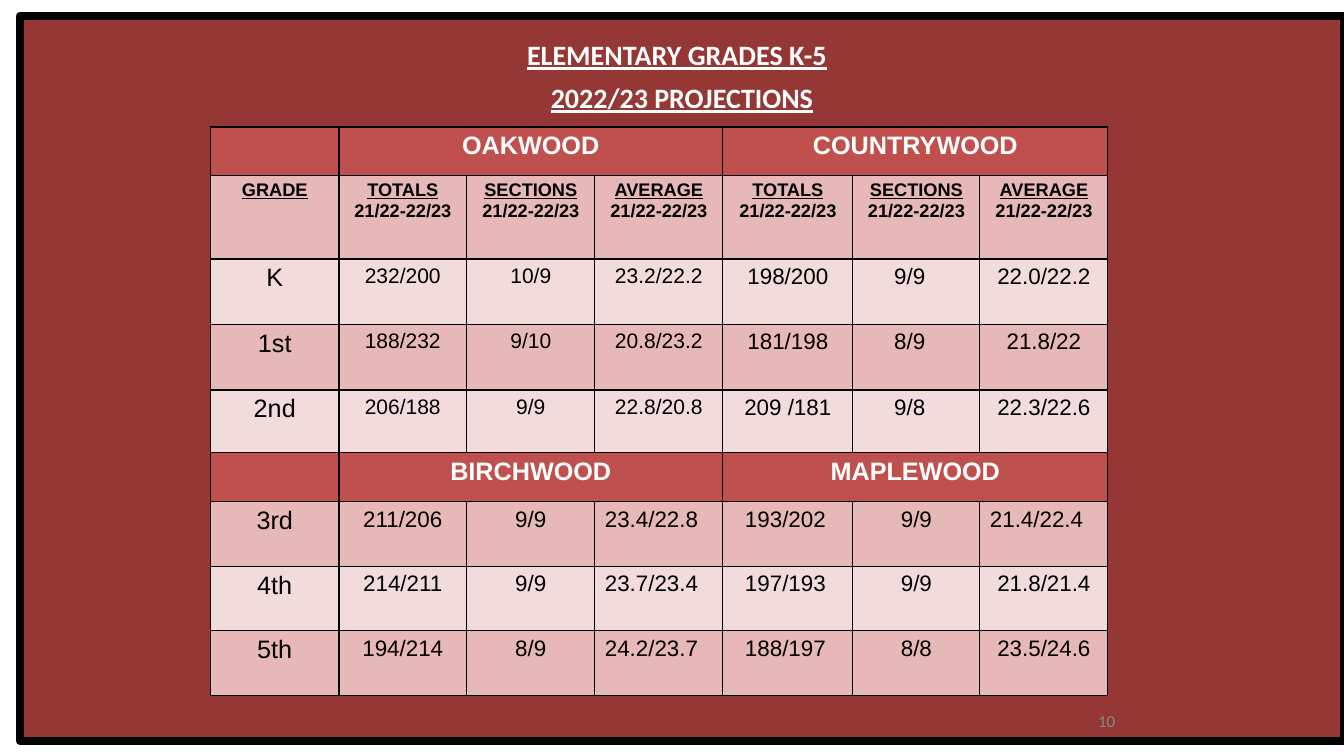
"""Build the elementary grades K-5 enrolment projections slide."""
from lxml.etree import SubElement
from pptx import Presentation
from pptx.dml.color import RGBColor
from pptx.enum.shapes import MSO_SHAPE
from pptx.enum.text import MSO_ANCHOR, PP_ALIGN
from pptx.oxml.ns import qn
from pptx.util import Inches, Pt

THEME = {
    "panel": RGBColor.from_string("953734"),
    "band": RGBColor.from_string("C0504D"),
    "dark_row": RGBColor.from_string("E6B9B8"),
    "light_row": RGBColor.from_string("F2DCDB"),
    "white": RGBColor.from_string("FFFFFF"),
    "black": RGBColor.from_string("000000"),
    "gray": RGBColor.from_string("888888"),
    "heading_font": "Calibri",
    "table_font": "Arial",
    "title": 20, "title_gap": 32, "school": 18, "header": 13,
    "grade": 18, "small_figure": 15, "figure": 16, "page": 12,
}
COLUMN_WIDTHS = [1.27] * 4 + [1.29, 1.26, 1.27]
ROW_HEIGHTS = [0.48, 0.83, 0.65, 0.65, 0.62, 0.49] + [0.64] * 3
HEADINGS = [f"{name}\n21/22-22/23" for name in ("TOTALS", "SECTIONS", "AVERAGE")]
ROWS = [
    ["", "OAKWOOD", "", "", "COUNTRYWOOD", "", ""],
    ["GRADE"] + HEADINGS * 2,
    ["K", "232/200", "10/9", "23.2/22.2", "198/200", "9/9", "22.0/22.2"],
    ["1st", "188/232", "9/10", "20.8/23.2", "181/198", "8/9", "21.8/22"],
    ["2nd", "206/188", "9/9", "22.8/20.8", "209 /181", "9/8", "22.3/22.6"],
    ["", "BIRCHWOOD", "", "", "MAPLEWOOD", "", ""],
    ["3rd", "211/206", "9/9", "23.4/22.8", "193/202", "9/9", "21.4/22.4"],
    ["4th", "214/211", "9/9", "23.7/23.4", "197/193", "9/9", "21.8/21.4"],
    ["5th", "194/214", "8/9", "24.2/23.7", "188/197", "8/8", "23.5/24.6"],
]
SCHOOL_ROWS = (0, 5)
HEADER_ROW = 1
LEFT_INDENTS = {(row, 5): 0.31 for row in (2, 3, 4)}
LEFT_INDENTS.update({(row, 3): 0 for row in (6, 7, 8)})
LEFT_INDENTS.update({(row, 4): 0.12 for row in (6, 7, 8)})
LEFT_INDENTS[6, 6] = 0


def style_paragraph(paragraph, font_name, size, color, bold=False, underline=False):
    paragraph.alignment = PP_ALIGN.CENTER
    font = paragraph.font
    font.name, font.size = font_name, Pt(size)
    font.color.rgb = color
    font.bold, font.underline = bold, underline


def draw_borders(cell, widths):
    properties = cell._tc.get_or_add_tcPr()
    for side, width in widths.items():
        line = SubElement(properties, qn(f"a:ln{side}"), w=str(Pt(width)))
        SubElement(SubElement(line, qn("a:solidFill")), qn("a:srgbClr"), val=str(THEME["black"]))


presentation = Presentation()
presentation.slide_width, presentation.slide_height = Inches(13.33), Inches(7.5)
slide = presentation.slides.add_slide(presentation.slide_layouts[6])

panel = slide.shapes.add_shape(
    MSO_SHAPE.RECTANGLE, Inches(0.2), Inches(0.16), Inches(13.13), Inches(7.19))
panel.shadow.inherit = False
panel.fill.solid()
panel.fill.fore_color.rgb = THEME["panel"]
panel.line.color.rgb = THEME["black"]
panel.line.width = Pt(6)
title_frame = panel.text_frame
title_frame.vertical_anchor = MSO_ANCHOR.TOP
title_frame.text = "ELEMENTARY GRADES K-5\n2022/23 PROJECTIONS"
for paragraph in title_frame.paragraphs:
    style_paragraph(paragraph, THEME["heading_font"], THEME["title"], THEME["white"], True, True)
    paragraph.space_before = Pt(4)
title_gap = title_frame.paragraphs[0].add_run()
title_gap.text = " "
title_gap.font.size = Pt(THEME["title_gap"])
title_gap.font.underline = False

page_box = slide.shapes.add_textbox(Inches(8.83), Inches(6.95), Inches(2.33), Inches(0.4))
page_box.text_frame.word_wrap = True
page_box.text_frame.vertical_anchor = MSO_ANCHOR.MIDDLE
page_number = page_box.text_frame.paragraphs[0]
page_number.text = "10"
style_paragraph(page_number, THEME["heading_font"], THEME["page"], THEME["gray"])
page_number.alignment = PP_ALIGN.RIGHT

table = slide.shapes.add_table(
    len(ROWS), len(COLUMN_WIDTHS), Inches(2.09), Inches(1.26),
    Inches(sum(COLUMN_WIDTHS)), Inches(sum(ROW_HEIGHTS))).table
table.first_row = table.horz_banding = False
for column, width in zip(table.columns, COLUMN_WIDTHS):
    column.width = Inches(width)
for row, height in zip(table.rows, ROW_HEIGHTS):
    row.height = Inches(height)

for row_index, texts in enumerate(ROWS):
    is_school = row_index in SCHOOL_ROWS
    is_header = row_index == HEADER_ROW
    for column_index, text in enumerate(texts):
        cell = table.cell(row_index, column_index)
        draw_borders(cell, {"L": 1.5 if column_index == 1 else 1,
                            "R": 1.5 if column_index == 0 else 1, "T": 1, "B": 1})
        cell.fill.solid()
        if is_school:
            fill, size = THEME["band"], THEME["school"]
        else:
            fill = THEME["light_row" if row_index in (2, 4, 7) else "dark_row"]
            if is_header:
                size = THEME["header"]
            elif column_index == 0:
                size = THEME["grade"]
            else:
                size = THEME["small_figure" if row_index < 5 and column_index < 4 else "figure"]
        cell.fill.fore_color.rgb = fill
        cell.text = text
        for line_index, paragraph in enumerate(cell.text_frame.paragraphs):
            style_paragraph(
                paragraph, THEME["table_font"], size, THEME["white" if is_school else "black"],
                is_school or is_header, is_header and line_index == 0)
            if (row_index, column_index) in LEFT_INDENTS:
                paragraph.alignment = PP_ALIGN.LEFT
                indent = Inches(LEFT_INDENTS[row_index, column_index])
                paragraph._p.get_or_add_pPr().set("marL", str(indent))

for row_index in SCHOOL_ROWS:
    for first_column in (1, 4):
        table.cell(row_index, first_column).merge(table.cell(row_index, first_column + 2))

presentation.save("out.pptx")
